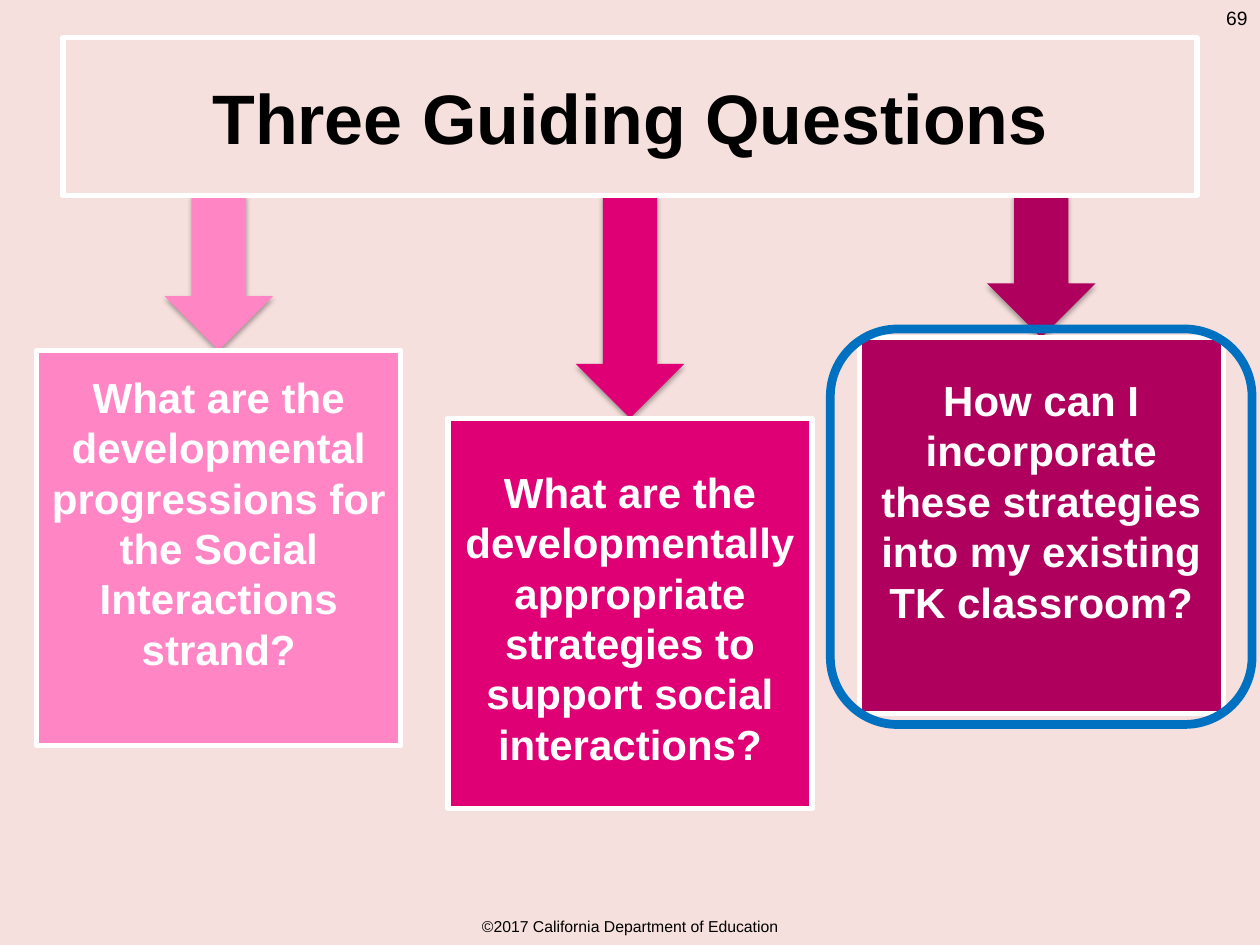
from pptx import Presentation
from pptx.dml.color import RGBColor
from pptx.enum.shapes import MSO_SHAPE
from pptx.enum.text import MSO_ANCHOR, PP_ALIGN
from pptx.oxml import parse_xml
from pptx.oxml.ns import nsdecls
from pptx.util import Pt

RECTANGLE, ROUNDED = MSO_SHAPE.RECTANGLE, MSO_SHAPE.ROUNDED_RECTANGLE
DOWN_ARROW = MSO_SHAPE.DOWN_ARROW
TOP, MIDDLE = MSO_ANCHOR.TOP, MSO_ANCHOR.MIDDLE
CENTER, RIGHT = PP_ALIGN.CENTER, PP_ALIGN.RIGHT

COLORS = {
    "background": "F5E0DD",
    "black": "000000",
    "white": "FFFFFF",
    "light": "FF85C5",
    "medium": "DE0074",
    "dark": "B0005D",
    "highlight": "0070C0",
}
TITLE = "Three Guiding Questions"
QUESTIONS = [
    {"text": "What are the developmental progressions for the Social Interactions strand?",
     "color": "light", "top": 200.2, "height": 226, "inset": 12},
    {"text": "What are the developmentally appropriate strategies to support social interactions?",
     "color": "medium", "top": 239, "height": 223, "inset": 27.5},
    {"text": "How can I incorporate these strategies into my existing TK classroom?",
     "color": "dark", "top": 193, "height": 214.6, "inset": 21},
]
PAGE_NUMBER = "69"
COPYRIGHT = "©2017 California Department of Education"

SLIDE_WIDTH, SLIDE_HEIGHT = 720, 540
TITLE_BOX = (36, 21.6, 648, 90)
TITLE_BOTTOM = TITLE_BOX[1] + TITLE_BOX[3]
QUESTION_WIDTH, QUESTION_PITCH = 208, 235
ARROW_WIDTH = 62


def rgb(name):
    return RGBColor.from_string(COLORS[name])


def add_shape(kind, box, fill=None, line=None, line_width=3):
    shape = slide.shapes.add_shape(kind, *map(Pt, box))
    shape.shadow.inherit = False
    if fill:
        shape.fill.solid()
        shape.fill.fore_color.rgb = rgb(fill)
    else:
        shape.fill.background()
    if line:
        shape.line.color.rgb = rgb(line)
        shape.line.width = Pt(line_width)
    else:
        shape.line.fill.background()
    return shape


def write(shape, text, size, color="black", bold=False, align=CENTER, anchor=MIDDLE):
    frame = shape.text_frame
    frame.word_wrap = True
    frame.vertical_anchor = anchor
    paragraph = frame.paragraphs[0]
    paragraph.alignment = align
    run = paragraph.add_run()
    run.text = text
    run.font.name = "Arial"
    run.font.size = Pt(size)
    run.font.bold = bold
    run.font.color.rgb = rgb(color)
    return frame


def add_shadow(shape):
    properties = shape._element.spPr
    properties.remove(properties.find("{*}effectLst"))
    properties.append(parse_xml(
        f'<a:effectLst {nsdecls("a")}>'
        f'<a:outerShdw blurRad="{Pt(3.1)}" dist="{Pt(1.8)}" dir="5400000" rotWithShape="0">'
        f'<a:srgbClr val="{COLORS["black"]}"><a:alpha val="35000"/></a:srgbClr>'
        '</a:outerShdw></a:effectLst>'))


prs = Presentation()
prs.slide_width, prs.slide_height = Pt(SLIDE_WIDTH), Pt(SLIDE_HEIGHT)
slide = prs.slides.add_slide(prs.slide_layouts[6])
slide.background.fill.solid()
slide.background.fill.fore_color.rgb = rgb("background")

footer = slide.shapes.add_textbox(Pt(27), Pt(520.5), Pt(666), Pt(18))
write(footer, COPYRIGHT, 9)

centers = [SLIDE_WIDTH / 2 + (i - 1) * QUESTION_PITCH for i in range(len(QUESTIONS))]
for center, question in zip(centers, QUESTIONS):
    arrow = add_shape(DOWN_ARROW, (center - ARROW_WIDTH / 2, TITLE_BOTTOM, ARROW_WIDTH,
                                   question["top"] - TITLE_BOTTOM), question["color"])
    add_shadow(arrow)

title = add_shape(RECTANGLE, TITLE_BOX, line="white")
write(title, TITLE, 40, bold=True)

for center, question in zip(centers, QUESTIONS):
    card = add_shape(RECTANGLE, (center - QUESTION_WIDTH / 2, question["top"],
                                 QUESTION_WIDTH, question["height"]),
                     question["color"], "white")
    frame = write(card, question["text"], 24, "white", True, anchor=TOP)
    frame.margin_top = Pt(question["inset"])
    frame.paragraphs[0].line_spacing = Pt(28.8)

page_number = slide.shapes.add_textbox(Pt(684), Pt(0), Pt(36), Pt(28.8))
write(page_number, PAGE_NUMBER, 11, align=RIGHT, anchor=TOP)

highlight = add_shape(ROUNDED, (474.5, 188, 241, 226), line="highlight", line_width=5)
highlight.adjustments[0] = 0.17

prs.save("out.pptx")
